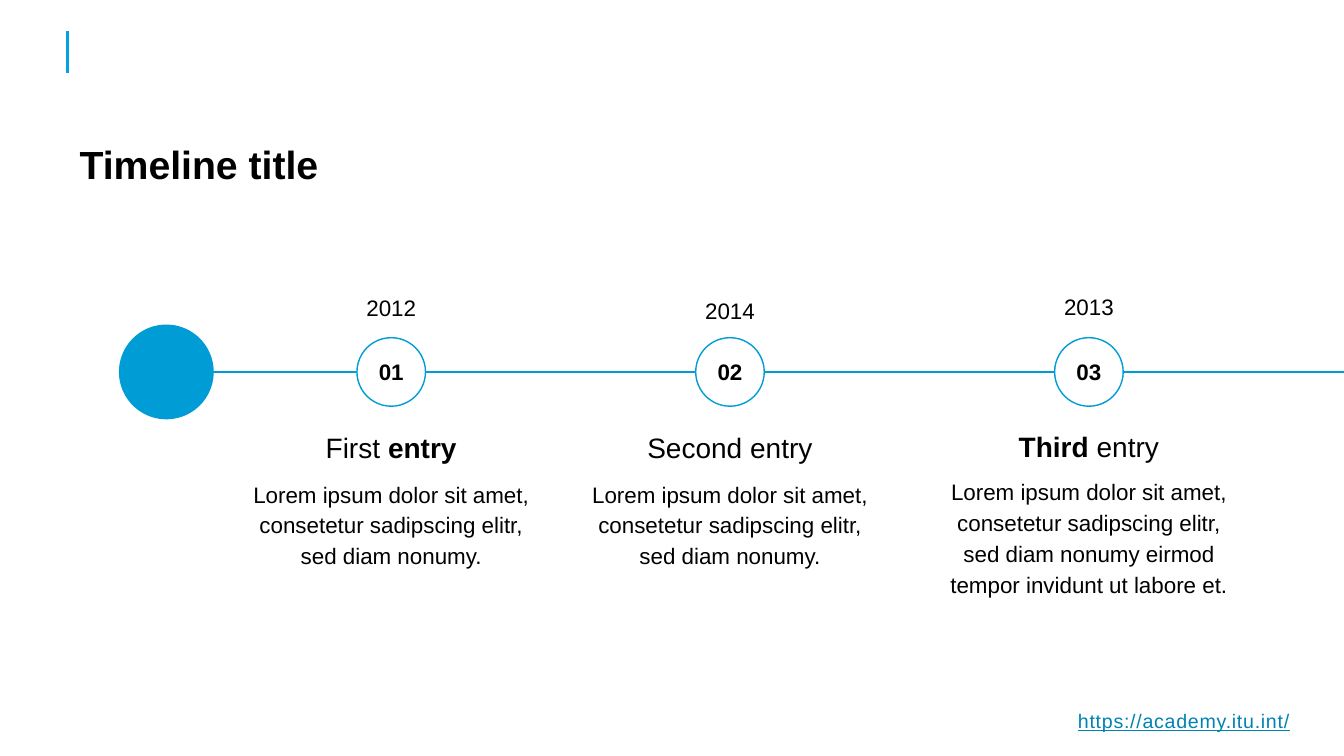
from lxml import etree
from pptx import Presentation
from pptx.dml.color import RGBColor
from pptx.enum.shapes import MSO_CONNECTOR, MSO_SHAPE
from pptx.enum.text import MSO_ANCHOR, MSO_AUTO_SIZE, PP_ALIGN
from pptx.oxml.ns import qn
from pptx.util import Inches, Pt

LEFT, CENTER, RIGHT = PP_ALIGN.LEFT, PP_ALIGN.CENTER, PP_ALIGN.RIGHT
TOP, MIDDLE = MSO_ANCHOR.TOP, MSO_ANCHOR.MIDDLE
NO_FIT = MSO_AUTO_SIZE.NONE
OVAL, STRAIGHT = MSO_SHAPE.OVAL, MSO_CONNECTOR.STRAIGHT

SLIDE_W, SLIDE_H = 13.33, 7.5
AXIS_Y = 3.69
COLORS = {"text": "000000", "accent": "009CD6", "bar": "00A3E0",
          "link": "0083B3", "paper": "FFFFFF"}
FORMATS = {
    "title": {"size": Pt(28), "bold": True},
    "year": {"size": Pt(16)},
    "number": {"size": Pt(16), "bold": True},
    "heading": {"size": Pt(20)},
    "body": {"size": Pt(16)},
    "link": {"size": Pt(14), "underline": True},
}
LOREM = "Lorem ipsum dolor sit amet, consetetur sadipscing elitr, sed diam nonumy"
# Centre, number, year, year top, heading as (text, bold), heading top, body, body top
ENTRIES = [
    (3.88, "01", "2012", 2.79, [("First ", False), ("entry", True)], 4.12,
     LOREM + ".", 4.68),
    (7.24, "02", "2014", 2.82, [("Second entry", False)], 4.12,
     LOREM + ".", 4.68),
    (10.8, "03", "2013", 2.78, [("Third ", True), ("entry", False)], 4.11,
     LOREM + " eirmod tempor invidunt ut labore et.", 4.66),
]


def color(name):
    return RGBColor.from_string(COLORS[name])


def write(holder, pieces, style, align=CENTER, spacing=1.0, anchor=TOP, ink="text"):
    """Fill a shape with one paragraph of (text, bold) pieces."""
    frame = holder.text_frame
    frame.word_wrap = True
    frame.auto_size = NO_FIT
    frame.vertical_anchor = anchor
    paragraph = frame.paragraphs[0]
    paragraph.alignment = align
    paragraph.line_spacing = spacing
    paragraph.space_before = Pt(0)
    for text, bold in pieces:
        run = paragraph.add_run()
        run.text = text
        settings = {"name": "Arial", "bold": bold, **FORMATS[style]}
        for key, value in settings.items():
            setattr(run.font, key, value)
        run.font.color.rgb = color(ink)
    return paragraph


def add_label(shapes, box, pieces, style, **layout):
    label = shapes.add_textbox(*map(Inches, box))
    return write(label, pieces, style, **layout)


def add_line(shapes, start, end, ink, width):
    line = shapes.add_connector(STRAIGHT, *map(Inches, (*start, *end)))
    line.line.color.rgb = color(ink)
    line.line.width = Pt(width)
    etree.SubElement(line._element.spPr, qn("a:effectLst"))


def add_circle(shapes, center, diameter, fill):
    left, top = center - diameter / 2, AXIS_Y - diameter / 2
    circle = shapes.add_shape(OVAL, *map(Inches, (left, top, diameter, diameter)))
    circle.shadow.inherit = False
    circle.fill.solid()
    circle.fill.fore_color.rgb = color(fill)
    circle.line.color.rgb = color("accent")
    circle.line.width = Pt(1)
    return circle


def add_frame(slide):
    # Web address and accent bar
    address = add_label(slide.shapes, (10.16, 6.98, 2.73, 0.34),
                        [("https://academy.itu.int/", False)], "link",
                        align=RIGHT, ink="link")
    address.runs[0].font._element.set("spc", "50")
    add_line(slide.shapes, (0.67, 0.31), (0.67, 0.72), "bar", 2)


def add_title(slide, box):
    title = slide.shapes.title
    title.left, title.top, title.width, title.height = map(Inches, box)
    write(title, [("Timeline title", True)], "title", align=LEFT, spacing=0.9)


def add_axis(slide, start):
    add_line(slide.shapes, (start, AXIS_Y), (SLIDE_W, AXIS_Y), "accent", 1)
    start_dot = add_circle(slide.shapes, start, 0.94, "accent")
    start_dot.line.fill.background()


def add_entry(slide, center, number, year, year_top, heading, heading_top,
              body, body_top):
    shapes = slide.shapes.add_group_shape().shapes

    def box(top, width, height):
        return center - width / 2, top, width, height

    add_label(shapes, box(year_top, 1.69, 0.44), [(year, False)], "year", spacing=1.3)
    marker = add_circle(shapes, center, 0.68, "paper")
    write(marker, [(number, True)], "number", anchor=MIDDLE)
    add_label(shapes, box(heading_top, 2.37, 0.44), heading, "heading", spacing=1.3)
    add_label(shapes, box(body_top, 2.97, 1.31), [(body, False)], "body",
              spacing=Pt(22))


def main():
    deck = Presentation()
    deck.slide_width, deck.slide_height = Inches(SLIDE_W), Inches(SLIDE_H)
    slide = deck.slides.add_slide(deck.slide_layouts[5])
    add_frame(slide)
    add_title(slide, (0.69, 1.39, 9.91, 0.53))
    add_axis(slide, 1.65)
    for entry in ENTRIES:
        add_entry(slide, *entry)
    deck.save("out.pptx")


if __name__ == "__main__":
    main()
